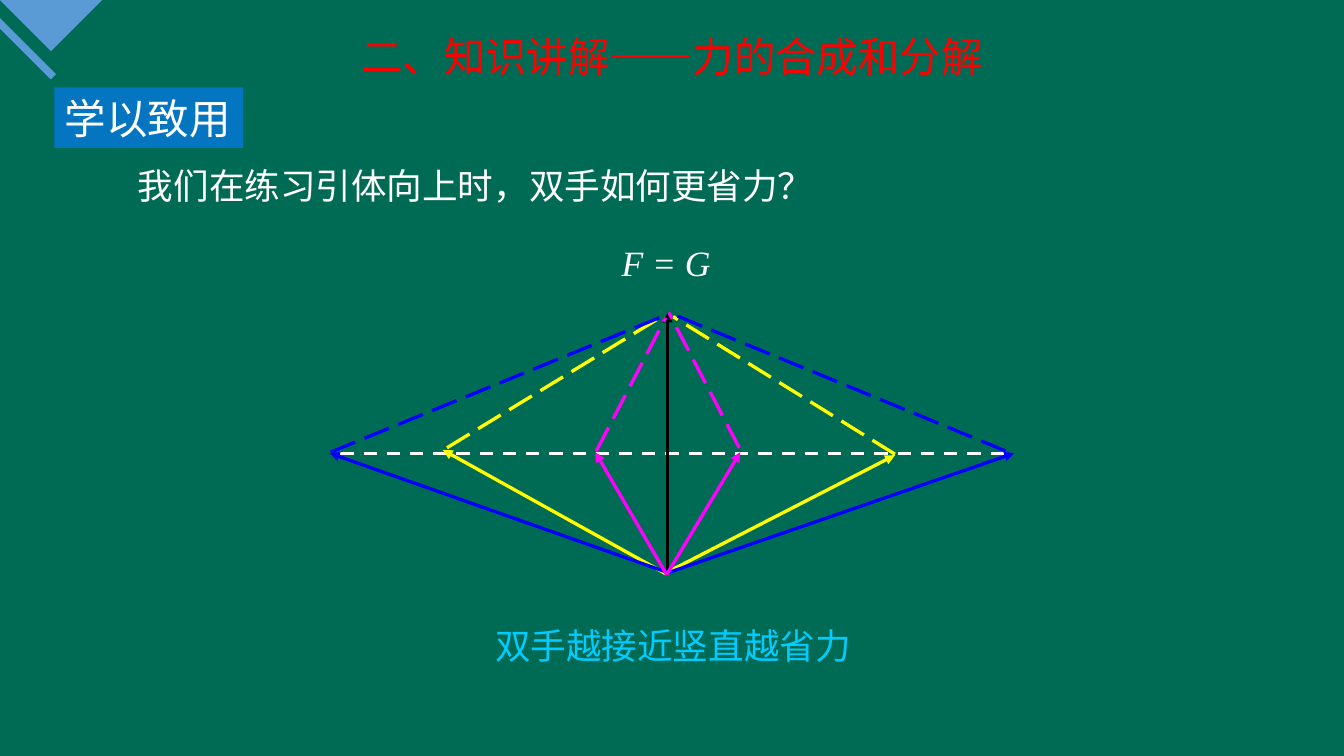
from lxml import etree
from pptx import Presentation
from pptx.dml.color import RGBColor
from pptx.enum import dml, shapes, text
from pptx.oxml import ns
from pptx.util import Pt

COLORS = {
    "board": "006B55", "corner": "5B9BD5", "label": "0375C1", "white": "FFFFFF",
    "title": "FF0000", "answer": "00CCFF", "resultant": "000000",
    "wide": "0000FF", "medium": "FFFF00", "narrow": "FF00FF",
}
CJK = "Noto Sans CJK SC"
LATIN = "Times New Roman"
ALIGN = text.PP_ALIGN
DASH = dml.MSO_LINE

MEDIUM_FORCES = [
    ((449.3, 387.4), (298.8, 303.8), (301.7, 302.4), (444.2, 215.3)),
    ((450, 386.6), (604.1, 307.4), (604.1, 306.7), (454.3, 213.8)),
]
WIDE_FORCES = [
    ((450.7, 386.6), (222.5, 306), (223.2, 305.3), (448.6, 213.1)),
    ((451.4, 386.6), (684.7, 306), (679, 304.6), (451.4, 211)),
]
NARROW_FORCES = [
    ((450, 388.1), (401.8, 305.3), (402.5, 304.6), (449.3, 214.6)),
    ((450, 388.1), (499.7, 305.3), (499, 302.4), (451.4, 211)),
]


def rgb(name):
    return RGBColor.from_string(COLORS[name])


def write(sp, words, size, color, align=ALIGN.LEFT, spacing=None, indent=0,
          font=CJK, italic=False, wrap=True):
    tf = sp.text_frame
    tf.word_wrap = wrap
    tf.vertical_anchor = text.MSO_ANCHOR.MIDDLE
    p = tf.paragraphs[0]
    p.alignment = align
    if spacing:
        p.line_spacing = spacing
    if indent:
        p._p.get_or_add_pPr().set("indent", str(Pt(indent)))
    r = p.add_run()
    r.text = words
    r.font.size = Pt(size)
    r.font.name = font
    r.font.italic = italic
    r.font.color.rgb = rgb(color)
    etree.SubElement(r.font._element, ns.qn("a:ea")).set("typeface", font)


def add_text(s, box, words, size, color, **style):
    sp = s.shapes.add_textbox(*map(Pt, box))
    write(sp, words, size, color, **style)


def add_label(s, box, words):
    sp = s.shapes.add_shape(shapes.MSO_SHAPE.RECTANGLE, *map(Pt, box))
    sp.shadow.inherit = False
    sp.fill.solid()
    sp.fill.fore_color.rgb = rgb("label")
    sp.line.fill.background()
    write(sp, words, 28, "white", wrap=False)


def add_line(parent, start, end, color, width=2.25, dash=None, arrow=False):
    line = parent.shapes.add_connector(
        shapes.MSO_CONNECTOR.STRAIGHT, *map(Pt, start + end))
    line.line.color.rgb = rgb(color)
    line.line.width = Pt(width)
    if dash:
        line.line.dash_style = dash
    if arrow:
        ln = line.line._get_or_add_ln()
        etree.SubElement(ln, ns.qn("a:tailEnd")).set("type", "triangle")
    etree.SubElement(line._element.spPr, ns.qn("a:effectLst"))


def add_corner(s):
    outline = s.shapes.build_freeform(Pt(34.5), Pt(34.5))
    outline.add_line_segments([(Pt(69), 0), (0, 0)], close=True)
    sp = outline.convert_to_shape()
    sp.shadow.inherit = False
    sp.fill.solid()
    sp.fill.fore_color.rgb = rgb("corner")
    sp.line.fill.background()
    add_line(s, (-8.6, 7.2), (36, 51.8), "corner", width=5)


def add_parallelogram(group, forces, color):
    for origin, tip, *_ in forces:
        add_line(group, origin, tip, color, arrow=True)
    for *_, start, end in forces:
        add_line(group, start, end, color, dash=DASH.LONG_DASH)


def add_force_diagram(s):
    group = s.shapes.add_group_shape()
    add_line(group, (229.7, 306), (682.6, 306), "white", dash=DASH.DASH)
    add_parallelogram(group, MEDIUM_FORCES, "medium")
    add_line(group, (450.7, 386.6), (450.7, 211), "resultant", arrow=True)
    add_parallelogram(group, WIDE_FORCES, "wide")
    add_parallelogram(group, NARROW_FORCES, "narrow")


def main():
    prs = Presentation()
    prs.slide_width, prs.slide_height = Pt(907.2), Pt(510.5)
    s = prs.slides.add_slide(prs.slide_layouts[6])
    s.background.fill.solid()
    s.background.fill.fore_color.rgb = rgb("board")

    add_corner(s)
    add_label(s, (36.7, 59, 127.5, 41), "学以致用")
    add_text(s, (38, 101, 832.5, 42.5), "我们在练习引体向上时，双手如何更省力？",
             24, "white", align=ALIGN.JUSTIFY, spacing=1.2, indent=48)
    add_text(s, (38, 403, 832.5, 51), "双手越接近竖直越省力",
             24, "answer", align=ALIGN.CENTER, spacing=1.5)
    add_text(s, (412.5, 159, 86.5, 36), "F = G", 24, "white",
             font=LATIN, italic=True)
    add_force_diagram(s)
    add_text(s, (0, 17.3, 907.2, 41), "二、知识讲解——力的合成和分解",
             28, "title", align=ALIGN.CENTER)
    prs.save("out.pptx")


if __name__ == "__main__":
    main()
